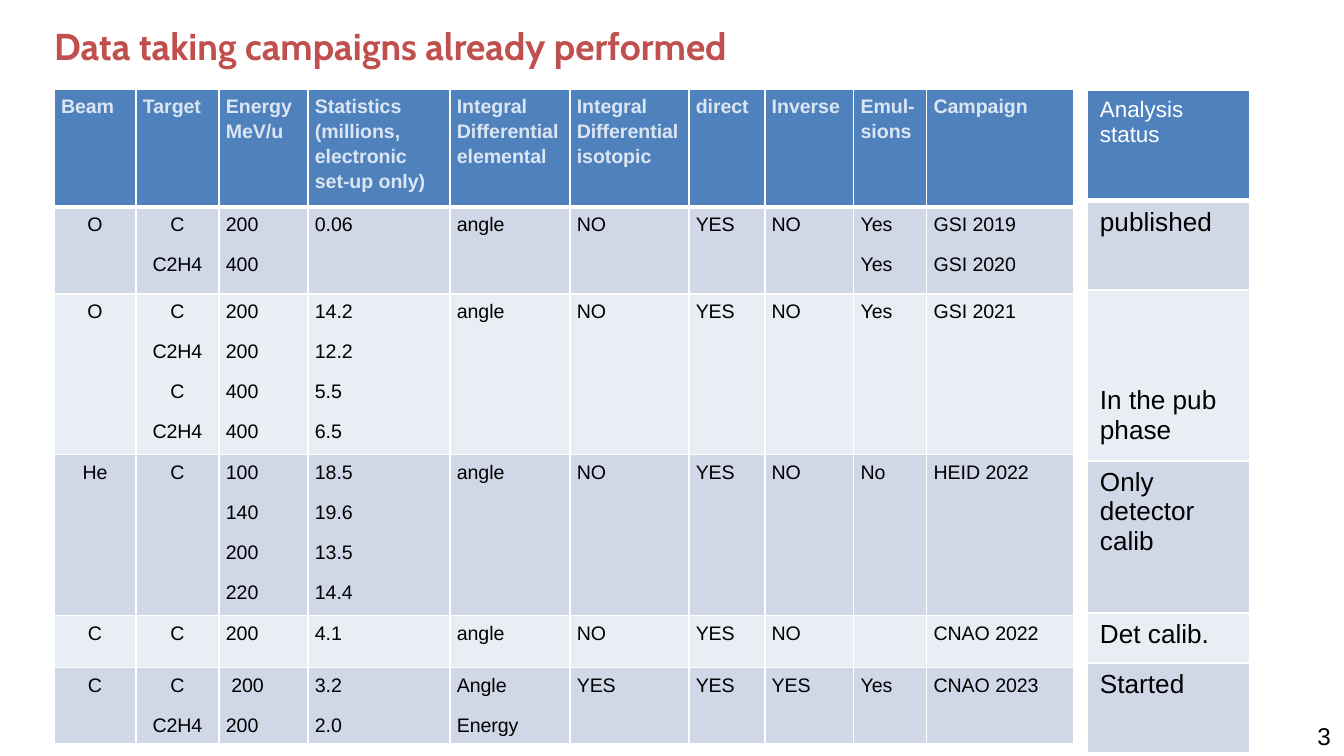
from lxml.etree import SubElement
from pptx import Presentation
from pptx.dml.color import RGBColor
from pptx.enum.text import MSO_ANCHOR as Anchor, PP_ALIGN as Align
from pptx.oxml.ns import qn
from pptx.util import Emu, Pt

EMU_PER_PX = 914400 / 134.4


def px(value):
    return Emu(round(value * EMU_PER_PX))


def color(hex_string):
    return RGBColor.from_string(hex_string)


def write_text(frame, text, size, hex_string, font="Arial", bold=False,
               align=Align.LEFT, spacing=1.0, after=0):
    for index, line in enumerate(text.split("\n")):
        paragraph = frame.paragraphs[0] if index == 0 else frame.add_paragraph()
        paragraph.alignment = align
        paragraph.line_spacing = spacing
        paragraph.space_before = Pt(0)
        paragraph.space_after = Pt(after)
        paragraph.font.size = Pt(size)
        if line:
            run = paragraph.add_run()
            run.text = line
            run.font.name = font
            run.font.size = Pt(size)
            run.font.bold = bold
            run.font.color.rgb = color(hex_string)


class SlideBuilder:
    header_fill = "4F81BD"
    band_fills = ("E9EDF4", "D0D8E8")
    border = "FFFFFF"
    ink = "000000"
    accent = "C0504D"

    def __init__(self, slide):
        self.slide = slide

    def title(self, text, left, top, width, height):
        shape = self.slide.shapes.title
        shape.left, shape.top = px(left), px(top)
        shape.width, shape.height = px(width), px(height)
        frame = shape.text_frame
        frame.margin_left = frame.margin_right = 0
        frame.margin_top = frame.margin_bottom = 0
        frame.vertical_anchor = Anchor.MIDDLE
        write_text(frame, text, 20, self.accent, font="Cabin", bold=True, spacing=0.9)

    def label(self, text, left, top, width, height):
        shape = self.slide.shapes.add_textbox(px(left), px(top), px(width), px(height))
        frame = shape.text_frame
        frame.word_wrap = True
        frame.vertical_anchor = Anchor.MIDDLE
        write_text(frame, text, 13, self.ink, align=Align.RIGHT)

    def table(self, rows, left, top, widths, heights, margins,
              header_format, body_format, centered=()):
        shape = self.slide.shapes.add_table(
            len(heights), len(widths), px(left), px(top), px(sum(widths)), px(sum(heights)))
        table = shape.table
        table.horz_banding = False
        for column, width in zip(table.columns, widths):
            column.width = px(width)
        for row, height in zip(table.rows, heights):
            row.height = px(height)
        for row_index, texts in enumerate(rows):
            for column_index, text in enumerate(texts):
                cell = table.cell(row_index, column_index)
                cell.margin_left = cell.margin_right = px(margins[0])
                cell.margin_top = cell.margin_bottom = px(margins[1])
                self.cell_borders(cell, row_index)
                cell.fill.solid()
                fill = self.band_fills[row_index % 2] if row_index else self.header_fill
                cell.fill.fore_color.rgb = color(fill)
                is_centered = row_index and column_index in centered
                write_text(cell.text_frame, text,
                           align=Align.CENTER if is_centered else Align.LEFT,
                           **(body_format if row_index else header_format))
        return table

    def cell_borders(self, cell, row_index):
        properties = cell._tc.get_or_add_tcPr()
        widths = {"L": 1, "R": 1, "T": 3 if row_index == 1 else 1,
                  "B": 3 if row_index == 0 else 1}
        for side, width in widths.items():
            line = SubElement(properties, qn(f"a:ln{side}"), w=str(Pt(width)))
            fill = SubElement(line, qn("a:solidFill"))
            SubElement(fill, qn("a:srgbClr"), val=self.border)


CAMPAIGNS = [
    ["Beam", "Target", "Energy MeV/u", "Statistics (millions, electronic set-up only)",
     "Integral Differential elemental", "Integral Differential isotopic",
     "direct", "Inverse", "Emul-sions", "Campaign"],
    ["O", "C\nC2H4", "200\n400", "0.06", "angle", "NO", "YES", "NO",
     "Yes\nYes", "GSI 2019\nGSI 2020"],
    ["O", "C\nC2H4\nC\nC2H4", "200\n200\n400\n400", "14.2\n12.2\n5.5\n6.5",
     "angle", "NO", "YES", "NO", "Yes", "GSI 2021"],
    ["He", "C", "100\n140\n200\n220", "18.5\n19.6\n13.5\n14.4",
     "angle", "NO", "YES", "NO", "No", "HEID 2022"],
    ["C", "C", "200", "4.1", "angle", "NO", "YES", "NO", "", "CNAO 2022"],
    ["C", "C\nC2H4", " 200\n200", "3.2\n2.0", "Angle\nEnergy",
     "YES", "YES", "YES", "Yes", "CNAO 2023"],
]
STATUSES = ["Analysis\nstatus", "published", "In the pub phase",
            "Only detector calib", "Det calib.", "Started"]


def main():
    presentation = Presentation()
    presentation.slide_width, presentation.slide_height = px(1344), px(756)
    builder = SlideBuilder(presentation.slides.add_slide(presentation.slide_layouts[5]))

    builder.title("Data taking campaigns already performed", 54, 4, 1284, 88)
    builder.label("3", 1042, 716, 302, 40)

    campaign_format = dict(size=10.5, spacing=1.15, after=8)
    builder.table(
        CAMPAIGNS, 54, 89,
        widths=[82, 83, 89, 142, 120, 119, 76, 89, 73, 147],
        heights=[118, 87, 145, 145, 52, 69],
        margins=(7, 4),
        header_format=dict(campaign_format, hex_string="DCE6F2", bold=True),
        body_format=dict(campaign_format, hex_string=builder.ink),
        centered=(0, 1))

    status_table = builder.table(
        [[status] for status in STATUSES], 1087, 90,
        widths=[163], heights=[111, 89, 171, 152, 50, 90],
        margins=(13, 7),
        header_format=dict(size=12, hex_string="FFFFFF"),
        body_format=dict(size=14, hex_string=builder.ink))
    status_table.cell(2, 0).margin_top = px(96)

    presentation.save("out.pptx")


if __name__ == "__main__":
    main()
